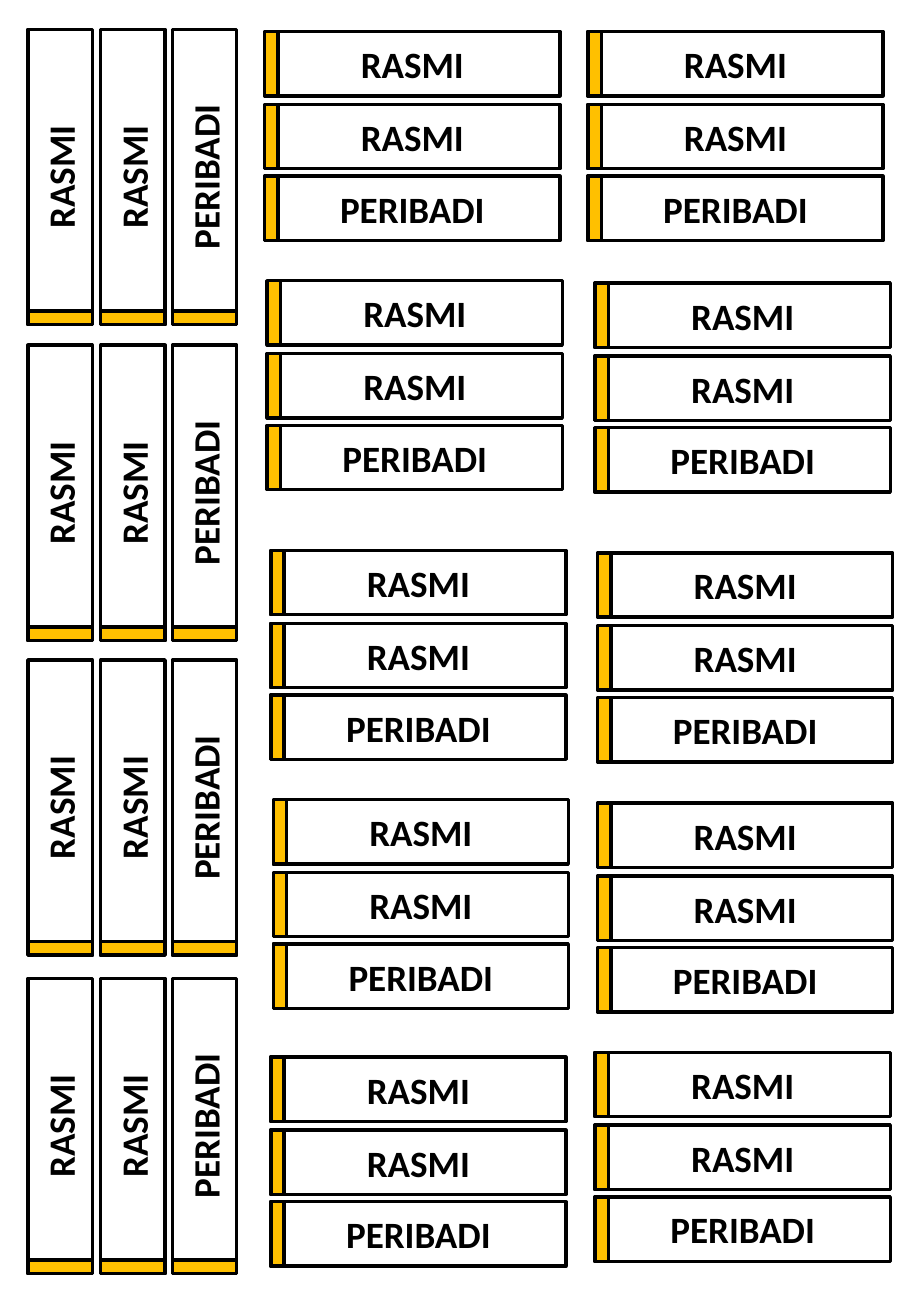
"""Build a sheet of key tags: upright stacks on the left, level stacks in two columns."""
from dataclasses import dataclass

from pptx import Presentation
from pptx.dml.color import RGBColor
from pptx.enum.shapes import MSO_SHAPE
from pptx.enum.text import MSO_ANCHOR, PP_ALIGN
from pptx.shapes.autoshape import Shape
from pptx.shapes.group import GroupShape
from pptx.slide import Slide
from pptx.util import Emu, Pt

EMU_PER_PX = 9144
PAGE_WIDTH, PAGE_HEIGHT = 750, 1083
TAG_LENGTH, TAG_THICKNESS, BAND_LENGTH = 243, 53, 11
TWO_TAG_STEPS = 119
BLACK = RGBColor(0x00, 0x00, 0x00)
AMBER = RGBColor(0xFF, 0xC0, 0x00)
FONT = "Calibri"
TAG_WORDS = ("RASMI", "RASMI", "PERIBADI")


@dataclass(frozen=True)
class Stack:
    """Visible top left corner of three tags, and their direction."""
    left: int
    top: int
    upright: bool = False


STACKS = (
    *(Stack(23, top, upright=True) for top in (24, 284, 543, 805)),
    Stack(218, 26), Stack(484, 26),
    Stack(220, 231), Stack(490, 233),
    Stack(223, 453), Stack(492, 455),
    Stack(225, 658), Stack(492, 661),
    Stack(223, 870), Stack(490, 866),
)


def px(length: int) -> Emu:
    """Turn px into EMU."""
    return Emu(length * EMU_PER_PX)


def add_bar(group: GroupShape, left: int, top: int, length: int, upright: bool) -> Shape:
    """Add an outlined bar whose visible corner is at left, top."""
    if upright:
        shift = (length - TAG_THICKNESS) // 2
        left, top = left - shift, top + shift
    bar = group.shapes.add_shape(
        MSO_SHAPE.RECTANGLE, px(left), px(top), px(length), px(TAG_THICKNESS))
    bar.rotation = 270 if upright else 0
    bar.shadow.inherit = False
    bar.fill.background()
    bar.line.color.rgb = BLACK
    bar.line.width = Pt(2)
    return bar


def write_word(bar: Shape, word: str) -> None:
    """Write a bold centred word in a bar."""
    frame = bar.text_frame
    frame.word_wrap = True
    frame.vertical_anchor = MSO_ANCHOR.MIDDLE
    para = frame.paragraphs[0]
    para.alignment = PP_ALIGN.CENTER
    span = para.add_run()
    span.text = word
    span.font.name = FONT
    span.font.size = Pt(22)
    span.font.bold = True
    span.font.color.rgb = BLACK


def add_tag(group: GroupShape, left: int, top: int, word: str, upright: bool) -> None:
    """Add a worded tag with an amber band at its starting end."""
    write_word(add_bar(group, left, top, TAG_LENGTH, upright), word)
    band_top = top + TAG_LENGTH - BAND_LENGTH if upright else top
    band = add_bar(group, left, band_top, BAND_LENGTH, upright)
    band.fill.solid()
    band.fill.fore_color.rgb = AMBER


def add_stack(page: Slide, stack: Stack) -> None:
    """Add one group of tags, side by side if upright, else one below another."""
    group = page.shapes.add_group_shape()
    for index, word in enumerate(TAG_WORDS):
        offset = (index * TWO_TAG_STEPS + 1) // 2
        left = stack.left + (offset if stack.upright else 0)
        top = stack.top + (0 if stack.upright else offset)
        add_tag(group, left, top, word, stack.upright)


def main() -> None:
    """Build and save the deck."""
    deck = Presentation()
    deck.slide_width, deck.slide_height = px(PAGE_WIDTH), px(PAGE_HEIGHT)
    page = deck.slides.add_slide(deck.slide_layouts[6])
    for stack in STACKS:
        add_stack(page, stack)
    deck.save("out.pptx")


if __name__ == "__main__":
    main()
